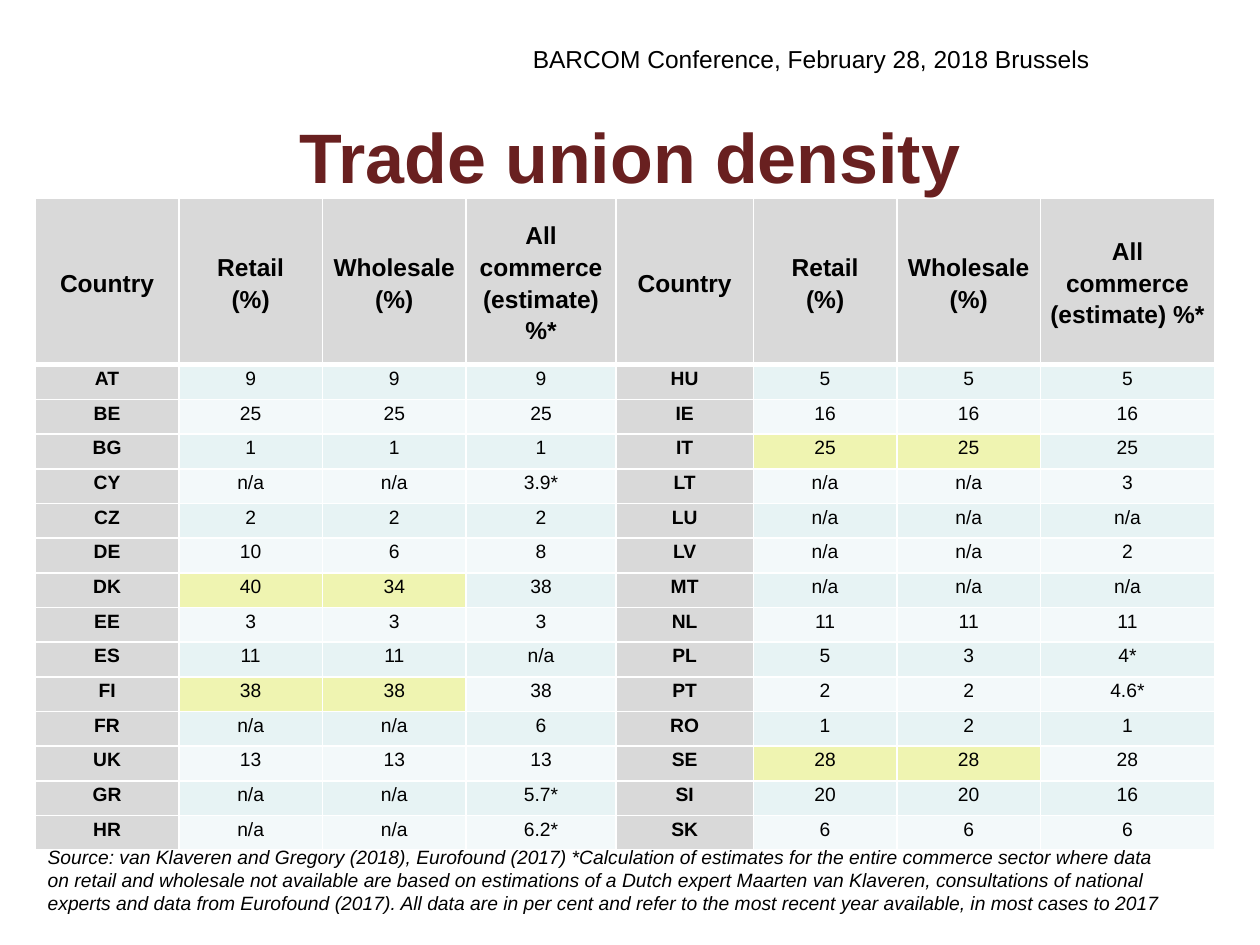
from lxml import etree
from pptx import Presentation
from pptx import util as u
from pptx.dml.color import RGBColor
from pptx.enum import text
from pptx.oxml.ns import qn

COLORS = {"title": "692020", "ink": "000000", "header": "D9D9D9", "odd": "E7F3F4",
          "even": "F3F9FA", "highlight": "EFF4B1", "border": "FFFFFF"}

HEADINGS = ["Country", "Retail\v(%)", "Wholesale (%)", "All commerce (estimate) %*"]

# Country, retail, wholesale, all commerce: left half, then right half
DENSITY = [
    "AT 9 9 9 HU 5 5 5",
    "BE 25 25 25 IE 16 16 16",
    "BG 1 1 1 IT 25 25 25",
    "CY n/a n/a 3.9* LT n/a n/a 3",
    "CZ 2 2 2 LU n/a n/a n/a",
    "DE 10 6 8 LV n/a n/a 2",
    "DK 40 34 38 MT n/a n/a n/a",
    "EE 3 3 3 NL 11 11 11",
    "ES 11 11 n/a PL 5 3 4*",
    "FI 38 38 38 PT 2 2 4.6*",
    "FR n/a n/a 6 RO 1 2 1",
    "UK 13 13 13 SE 28 28 28",
    "GR n/a n/a 5.7* SI 20 20 16",
    "HR n/a n/a 6.2* SK 6 6 6",
]
HIGHLIGHTED = {"DK", "FI", "IT", "SE"}
COLUMN_WIDTHS = [1.14, 1.14, 1.14, 1.19, 1.09, 1.14, 1.14, 1.38]
HEADER_HEIGHT = 1.32

SOURCE_NOTE = (
    "Source: van Klaveren and Gregory (2018), Eurofound (2017) *Calculation of estimates for "
    "the entire commerce sector where data on retail and wholesale not available are based on "
    "estimations of a Dutch expert Maarten van Klaveren, consultations of national experts and "
    "data from Eurofound (2017). All data are in per cent and refer to the most recent year "
    "available, in most cases to 2017")


class SlideBuilder:
    """Holds the style and the current slide; boxes are shares of the slide's size."""

    font_name = "Arial"

    def __init__(self, presentation):
        self.width, self.height = presentation.slide_width, presentation.slide_height
        self.slide = presentation.slides.add_slide(presentation.slide_layouts[6])

    def place(self, left, top, width, height):
        return (round(left * self.width), round(top * self.height),
                round(width * self.width), round(height * self.height))

    def style(self, paragraph, size, color="ink", bold=False, italic=False, centered=False):
        font = paragraph.font
        font.name, font.size, font.bold, font.italic = self.font_name, u.Pt(size), bold, italic
        font.color.rgb = RGBColor.from_string(COLORS[color])
        paragraph.alignment = text.PP_ALIGN.CENTER if centered else text.PP_ALIGN.LEFT

    def text_box(self, box, content, size, anchor=text.MSO_ANCHOR.TOP, **style):
        frame = self.slide.shapes.add_textbox(*self.place(*box)).text_frame
        frame.word_wrap = True
        frame.vertical_anchor = anchor
        frame.text = content
        self.style(frame.paragraphs[0], size, **style)

    def borders(self, cell, **widths):
        properties = cell._tc.get_or_add_tcPr()
        for side in "LRTB":
            line = etree.SubElement(properties, qn(f"a:ln{side}"),
                                    w=str(u.Pt(widths.get(side, 1))))
            fill = etree.SubElement(line, qn("a:solidFill"))
            etree.SubElement(fill, qn("a:srgbClr"), val=COLORS["border"])

    def cell(self, cell, content, size, fill, bold, anchor, **border_widths):
        cell.text = content
        cell.margin_left = cell.margin_right = u.Inches(0.07)
        cell.margin_top = cell.margin_bottom = 0
        cell.vertical_anchor = anchor
        self.borders(cell, **border_widths)
        cell.fill.solid()
        cell.fill.fore_color.rgb = RGBColor.from_string(COLORS[fill])
        paragraph = cell.text_frame.paragraphs[0]
        paragraph.line_spacing = 1.15
        self.style(paragraph, size, bold=bold, centered=True)

    def density_table(self, box, headings, rows):
        place = self.place(*box)
        table = self.slide.shapes.add_table(len(rows) + 1, len(headings), *place).table
        for column, width in zip(table.columns, COLUMN_WIDTHS):
            column.width = u.Inches(width)
        header_height = u.Inches(HEADER_HEIGHT)
        for row in table.rows:
            row.height = (place[3] - header_height) // len(rows)
        table.rows[0].height = header_height

        for column, heading in enumerate(headings):
            self.cell(table.cell(0, column), heading, 14, "header", True,
                      text.MSO_ANCHOR.MIDDLE, B=3)
        for row, values in enumerate(rows, 1):
            for column, value in enumerate(values):
                field = column % 4
                country = values[column - field]
                if field == 0:
                    fill = "header"
                elif field < 3 and country in HIGHLIGHTED:
                    fill = "highlight"
                else:
                    fill = "odd" if row % 2 else "even"
                self.cell(table.cell(row, column), value, 11, fill, field == 0,
                          text.MSO_ANCHOR.TOP, T=3 if row == 1 else 1)


def main():
    presentation = Presentation()
    presentation.slide_width, presentation.slide_height = u.Inches(10), u.Inches(7.5)
    builder = SlideBuilder(presentation)

    # Title and conference line
    builder.text_box((0.05, 0.1, 0.9, 0.13), "Trade union density", 40,
                     text.MSO_ANCHOR.MIDDLE, color="title", bold=True, centered=True)
    builder.text_box((0.413, 0.04, 0.489, 0.045),
                     "BARCOM Conference, February 28, 2018 Brussels", 14)

    # Density by country, two halves side by side
    builder.density_table((0.028, 0.21, 0.936, 0.69), HEADINGS * 2,
                          [line.split() for line in DENSITY])

    # Source note
    builder.text_box((0.028, 0.888, 0.915, 0.088), SOURCE_NOTE, 11, italic=True)

    presentation.save("out.pptx")


if __name__ == "__main__":
    main()
